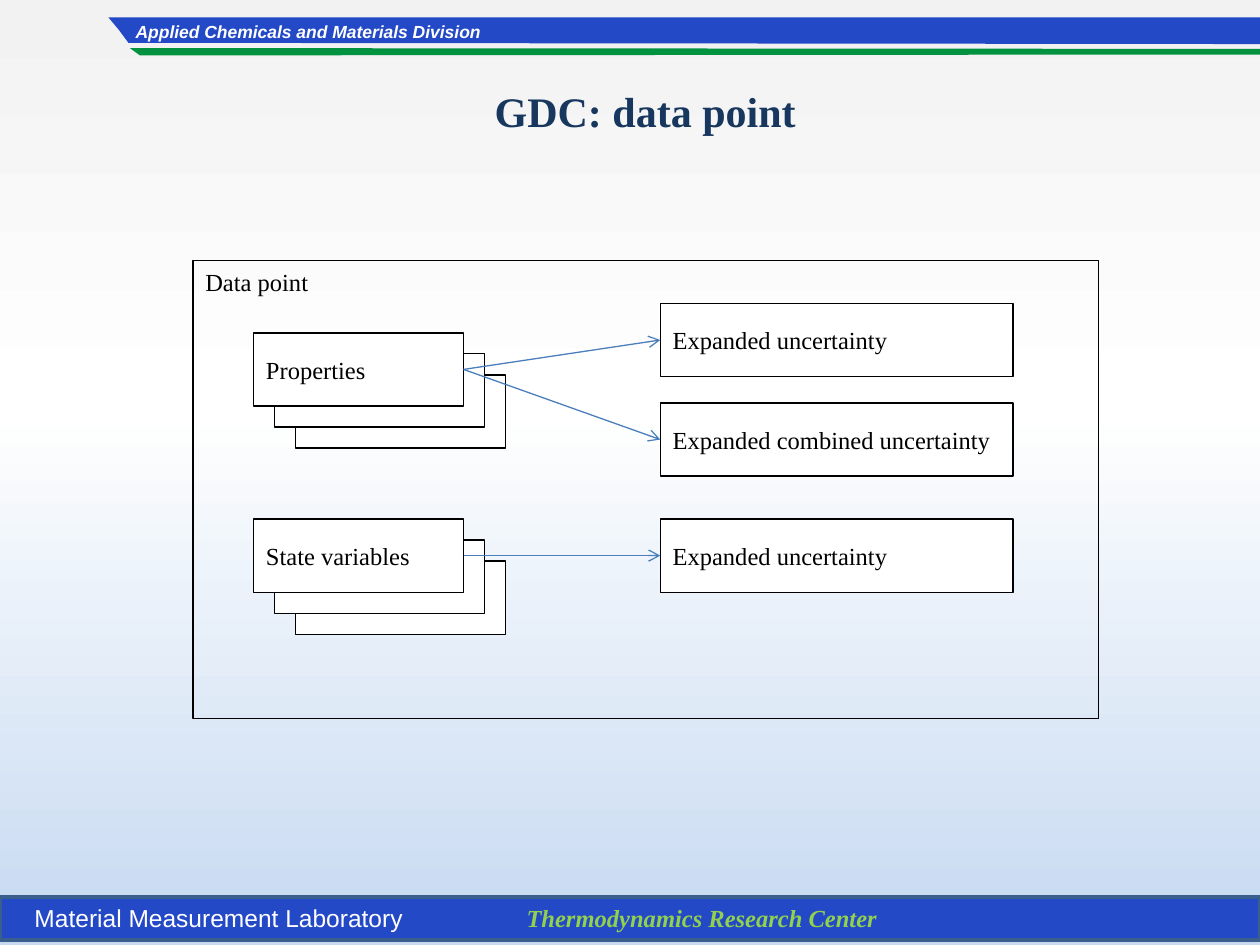
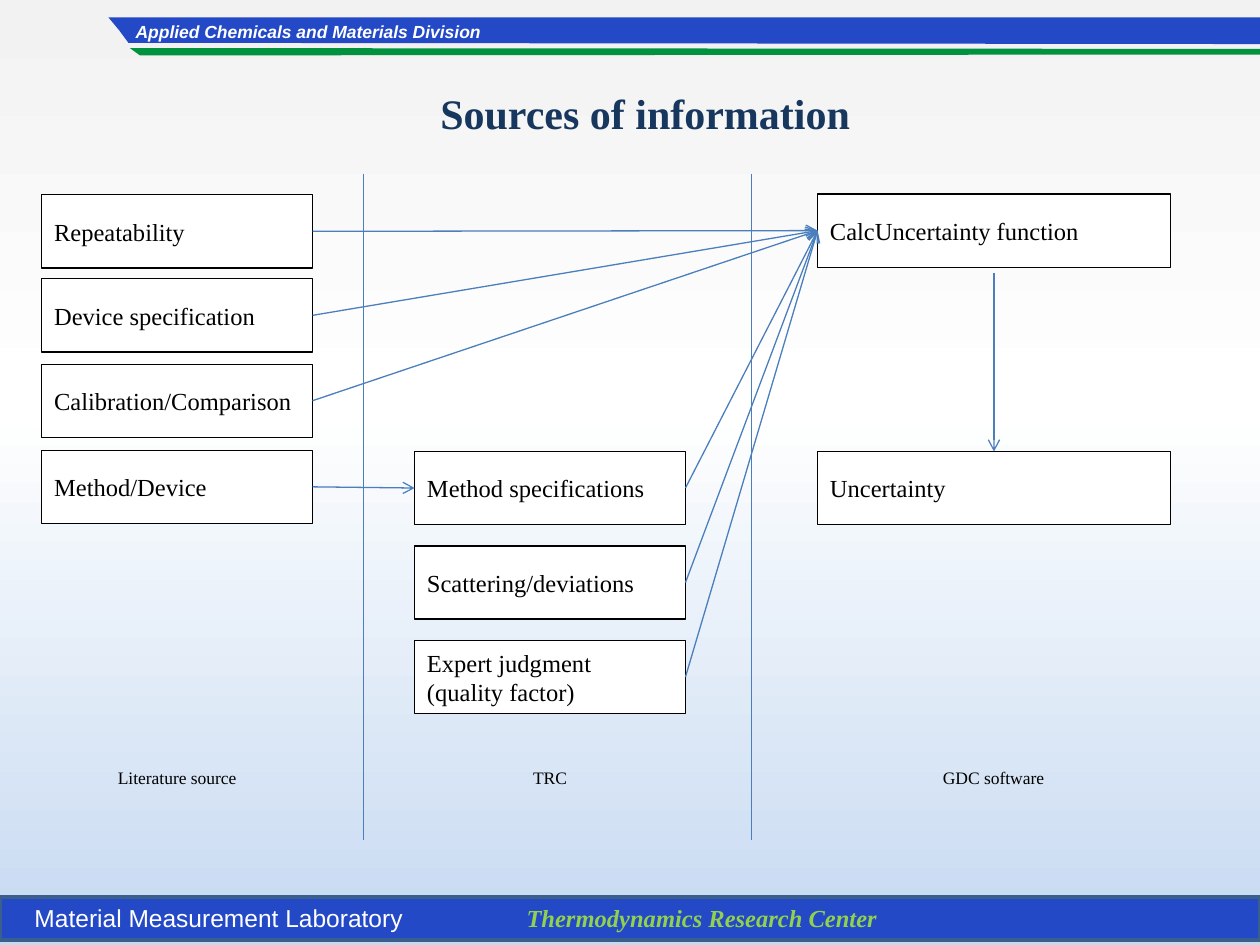
from lxml import etree
from pptx import Presentation
from pptx.dml.color import RGBColor
from pptx.enum.shapes import MSO_CONNECTOR, MSO_SHAPE
from pptx.enum.text import MSO_ANCHOR, MSO_AUTO_SIZE, PP_ALIGN
from pptx.oxml import parse_xml
from pptx.oxml.ns import nsdecls, qn
from pptx.util import Pt

RECTANGLE = MSO_SHAPE.RECTANGLE
STRAIGHT = MSO_CONNECTOR.STRAIGHT
TOP, MIDDLE = MSO_ANCHOR.TOP, MSO_ANCHOR.MIDDLE
LEFT, CENTER = PP_ALIGN.LEFT, PP_ALIGN.CENTER
NO_AUTOSIZE = MSO_AUTO_SIZE.NONE
SERIF, SANS = "Times New Roman", "Arial"
COLOURS = {
    "band": "2349C6", "band edge": "3A5F8C", "stripe": "00923F",
    "title": "17375E", "center name": "92D050", "connector": "4B7EBC",
    "black": "000000", "white": "FFFFFF",
    "sky top": "F2F2F2", "sky bottom": "C6D9F1",
}
RGB = {name: RGBColor.from_string(value) for name, value in COLOURS.items()}
BOX_HEIGHT = 41.8


def write(shape, text, size=14, colour="black", font=SERIF,
          align=LEFT, anchor=TOP, bold=False, italic=False):
    frame = shape.text_frame
    frame.word_wrap = True
    frame.auto_size = NO_AUTOSIZE
    frame.vertical_anchor = anchor
    frame.text = text
    for para in frame.paragraphs:
        para.alignment = align
        para.font.name = font
        para.font.size = Pt(size)
        para.font.bold = bold
        para.font.italic = italic
        para.font.color.rgb = RGB[colour]


def style_line(connector, arrow=True):
    connector.line.color.rgb = RGB["connector"]
    connector.line.width = Pt(0.75)
    if arrow:
        line = connector.line._get_or_add_ln()
        etree.SubElement(line, qn("a:tailEnd"), type="arrow")
    etree.SubElement(connector._element.spPr, qn("a:effectLst"))


deck = Presentation()
deck.slide_width, deck.slide_height = Pt(720), Pt(540)
layout = deck.slide_layouts[5]

stops = "".join(
    f'<a:gs pos="{position * 1000}"><a:srgbClr val="{COLOURS[name]}"/></a:gs>'
    for position, name in ((0, "sky top"), (43, "white"), (100, "sky bottom")))
background = deck.slide_master.background.fill
background.solid()
solid = deck.slide_master._element.cSld.bg.bgPr.find(qn("a:solidFill"))
solid.getparent().replace(solid, parse_xml(
    f'<a:gradFill {nsdecls("a")} rotWithShape="1"><a:gsLst>{stops}</a:gsLst>'
    '<a:lin ang="5400000" scaled="0"/></a:gradFill>'))

point_page, source_page = pages = [deck.slides.add_slide(layout) for _ in range(2)]

footer = point_page.shapes.add_shape(RECTANGLE, Pt(0), Pt(512.6), Pt(720), Pt(24.5))
footer.fill.solid()
footer.fill.fore_color.rgb = RGB["band"]
footer.line.color.rgb = RGB["band edge"]
footer.line.width = Pt(2)
footer.shadow.inherit = False
shared = [footer]

for colour, outline in (
    ("stripe", ((74.2, 27.5), (720, 28), (720, 31.2), (80, 31.7))),
    ("band", ((62, 10), (720, 10), (720, 25.2), (73.4, 24.5), (68, 17.2))),
):
    start, *corners = [(Pt(x), Pt(y)) for x, y in outline]
    builder = point_page.shapes.build_freeform(*start, scale=1.0)
    builder.add_line_segments(corners, close=True)
    ribbon = builder.convert_to_shape()
    ribbon.fill.solid()
    ribbon.fill.fore_color.rgb = RGB[colour]
    ribbon.line.fill.background()
    ribbon.shadow.inherit = False
    shared.append(ribbon)

for text, x, y, width, height, style in (
    ("Material Measurement Laboratory", 12.6, 512.6, 265, 24.5,
     dict(colour="white", font=SANS)),
    ("Applied Chemicals and Materials Division", 70.4, 8.2, 226, 19.8,
     dict(size=10, colour="white", font=SANS, bold=True, italic=True)),
    ("Thermodynamics Research Center", 293.8, 512.6, 293, 29.5,
     dict(colour="center name", bold=True, italic=True)),
):
    box = point_page.shapes.add_textbox(Pt(x), Pt(y), Pt(width), Pt(height))
    write(box, text, **style)
    shared.append(box)

for number, shape in enumerate(shared, 101):
    shape._element.nvSpPr.cNvPr.set("id", str(number))
    layout.shapes._spTree.append(shape._element)

for page, text, y in ((point_page, "GDC: data point", 45.2),
                      (source_page, "Sources of information", 46.2)):
    title = page.shapes.title
    title.left, title.top, title.width, title.height = Pt(94.4), Pt(y), Pt(548.6), Pt(36)
    write(title, text, 24, "title", align=CENTER, bold=True)

outer = point_page.shapes.add_shape(RECTANGLE, Pt(110.2), Pt(148.8), Pt(517.7), Pt(261.8))
outer.fill.background()
outer.line.color.rgb = RGB["black"]
outer.line.width = Pt(0.75)
outer.shadow.inherit = False
write(outer, "Data point")

cards = [(point_page, "" if step else text, 144.9 + 12 * step, y + 12 * step, 120, text)
         for text, y in (("Properties", 190.2), ("State variables", 296.6))
         for step in (2, 1, 0)]
uncertainties = [
    (point_page, text, 377.3, y, 201.6, name) for text, y, name in (
        ("Expanded uncertainty", 173.4, "Property uncertainty"),
        ("Expanded combined uncertainty", 230.3, "Combined uncertainty"),
        ("Expanded uncertainty", 296.6, "Variable uncertainty"))]
literature = [
    (source_page, text, 23.8, y, 154.8, text) for text, y in (
        ("Repeatability", 111.3), ("Device specification", 159.3),
        ("Calibration/Comparison", 208.1), ("Method/Device", 257.3))]
center = [
    (source_page, text, 236.9, 258 + 54 * row, 154.8, text) for row, text in enumerate(
        ("Method specifications", "Scattering/deviations",
         "Expert judgment\n(quality factor)"))]
software = [
    (source_page, text, 467.2, y, 201.6, text) for text, y in (
        ("CalcUncertainty function", 110.9), ("Uncertainty", 258))]

boxes = {}
for page, text, x, y, width, name in cards + uncertainties + literature + center + software:
    box = page.shapes.add_shape(RECTANGLE, Pt(x), Pt(y), Pt(width), Pt(BOX_HEIGHT))
    box.fill.solid()
    box.fill.fore_color.rgb = RGB["white"]
    box.line.color.rgb = RGB["black"]
    box.line.width = Pt(0.75)
    box.shadow.inherit = False
    if text:
        write(box, text, anchor=MIDDLE)
    boxes[name] = box

flows = [
    (point_page, "Properties", "Property uncertainty"),
    (point_page, "Properties", "Combined uncertainty"),
    (point_page, "State variables", "Variable uncertainty"),
    (source_page, "Method/Device", "Method specifications"),
]
flows += [(source_page, spec[1], "CalcUncertainty function")
          for spec in literature[:3] + center]
for page, origin, target in flows:
    arrow = page.shapes.add_connector(STRAIGHT, 0, 0, 0, 0)
    arrow.begin_connect(boxes[origin], 3)
    arrow.end_connect(boxes[target], 1)
    style_line(arrow)

result = source_page.shapes.add_connector(STRAIGHT, Pt(568), Pt(156.2), Pt(568), Pt(258))
result.end_connect(boxes["Uncertainty"], 0)
style_line(result)

for x in (207.8, 429.5):
    divider = source_page.shapes.add_connector(STRAIGHT, Pt(x), Pt(99.4), Pt(x), Pt(480))
    style_line(divider, arrow=False)

for text, x in (("Literature source", 23.8), ("TRC", 236.9), ("GDC software", 490.3)):
    label = source_page.shapes.add_textbox(Pt(x), Pt(434.9), Pt(154.8), Pt(19.4))
    write(label, text, 10, align=CENTER)

deck.save("out.pptx")
